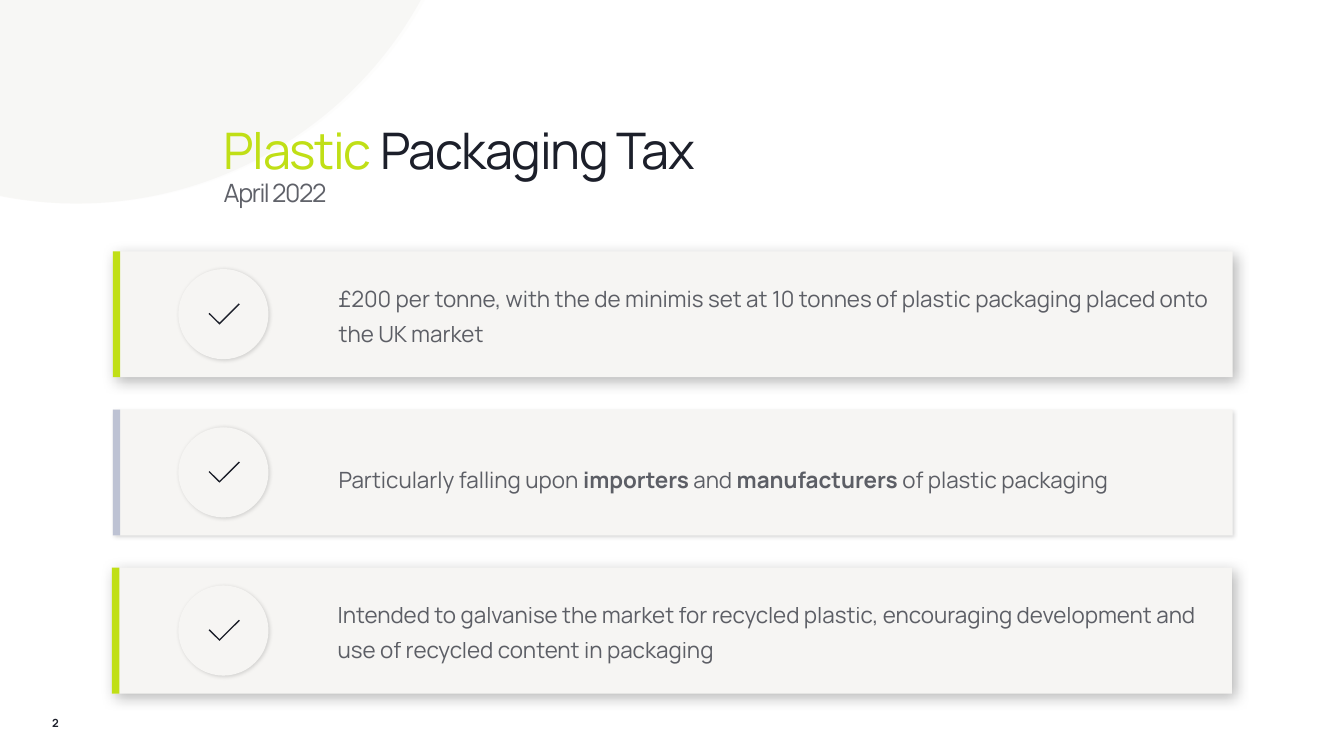
"""Build the Plastic Packaging Tax slide with three ticked cards."""
import pptx
import pptx.util
import pptx.dml.color
import pptx.enum.shapes
import pptx.enum.text
import pptx.oxml
import pptx.oxml.ns
import lxml.etree

Pt = pptx.util.Pt
RECT = pptx.enum.shapes.MSO_SHAPE.RECTANGLE
OVAL = pptx.enum.shapes.MSO_SHAPE.OVAL
ALIGN = pptx.enum.text.PP_ALIGN
MIDDLE = pptx.enum.text.MSO_ANCHOR.MIDDLE
qn = pptx.oxml.ns.qn
DARK, LIME, PALE, GREY = "1C1F2A", "C0DF16", "F6F5F3", "BDC2D3"
SOFT, DEEP = (15, 3, 1), (27, 10, 3)


def ink(item, hue, alpha=100, cast=None):
    """Colour a shape or a font; cast is shadow opacity, blur and distance."""
    item.fill.solid()
    item.fill.fore_color.rgb = pptx.dml.color.RGBColor.from_string(hue)
    if alpha < 100:
        tint = item._element.find(".//" + qn("a:srgbClr"))
        lxml.etree.SubElement(tint, qn("a:alpha"), val=str(alpha * 1000))
    if hasattr(item, "line"):
        item.line.fill.background()
        item.shadow.inherit = False
    if cast:
        shade, blur, dist = cast
        glow = lxml.etree.SubElement(
            item.element.spPr.find(qn("a:effectLst")), qn("a:outerShdw"),
            blurRad=str(Pt(blur)), dist=str(Pt(dist)), dir=str(45 * 60000),
            algn="tl", rotWithShape="0")
        tint = lxml.etree.SubElement(glow, qn("a:srgbClr"), val="000000")
        lxml.etree.SubElement(tint, qn("a:alpha"), val=str(shade * 1000))


def write(para, text, size=16, hue=DARK, alpha=100, bold=False, track=0):
    """Add a run of text to a paragraph."""
    run = para.add_run()
    run.text = text
    run.font.name = "Manrope"
    run.font.size = Pt(size)
    run.font.bold = bold
    ink(run.font, hue, alpha)
    if track:
        run.font._element.set("spc", str(track * 100))


deck = pptx.Presentation()
deck.slide_width, deck.slide_height = Pt(960), Pt(540)
board = deck.slides.add_slide(deck.slide_layouts[6]).shapes

for left, alpha in ((-226.8, 18), (-223.9, 5)):
    disc = board.add_shape(OVAL, Pt(left), Pt(-416.9), Pt(562.3), Pt(562.3))
    ink(disc, "E1DED7", alpha)

number = board.add_textbox(Pt(0), Pt(501.8), Pt(79.2), Pt(28.8)).text_frame
number.word_wrap = True
number.vertical_anchor = MIDDLE
number.paragraphs[0].alignment = ALIGN.CENTER
write(number.paragraphs[0], "2", size=8, bold=True)

title = board.add_textbox(Pt(159.8), Pt(74.9), Pt(720.7), Pt(98.6)).text_frame
title.word_wrap = True
title.margin_left = title.margin_right = title.margin_bottom = 0
title.margin_top = Pt(15.1)
head = title.paragraphs[0]
head.line_spacing = 0.9
write(head, "Plastic", size=36, hue=LIME, track=-1)
write(head, " Packaging Tax", size=36, track=-1)
head.add_line_break()
write(head, "April 2022", size=18, alpha=70, track=-1)

cards = [
    (80.6, LIME, DEEP, 0, [
        "£200 per tonne, with the de minimis set at 10 tonnes of plastic "
        "packaging placed onto the UK market"]),
    (80.6, GREY, SOFT, 7.5, [
        "Particularly falling upon ", "importers", " and ", "manufacturers",
        " of plastic packaging"]),
    (79.9, LIME, DEEP, 0, [
        "Intended to galvanise the market for recycled plastic, encouraging "
        "development and use of recycled content in packaging"]),
]
tick = [(22.3, 0.7), (21.6, 0), (7.8, 13.8), (0.7, 6.8), (0, 7.5), (7.8, 15.1)]

for row, (left, hue, cast, drop, parts) in enumerate(cards):
    top = 179.5 + 113 * row
    card = board.add_shape(RECT, Pt(left), Pt(top), Pt(800), Pt(90))
    ink(card, PALE, cast=cast)
    frame = card.text_frame
    frame.word_wrap = True
    frame.vertical_anchor = MIDDLE
    frame.margin_left, frame.margin_right = Pt(161.3), Pt(7.2)
    frame.margin_top, frame.margin_bottom = Pt(drop), Pt(3.6)
    para = frame.paragraphs[0]
    para.alignment = ALIGN.LEFT
    para.line_spacing = 1.3
    for place, part in enumerate(parts):
        write(para, part, alpha=70, bold=place % 2 == 1)

    bar = board.add_shape(RECT, Pt(left), Pt(top), Pt(5.3), Pt(90))
    ink(bar, hue)
    ring = board.add_shape(OVAL, Pt(127.4), Pt(top + 12.7), Pt(64.4), Pt(64.4))
    ink(ring, PALE, cast=SOFT)
    spots = [(Pt(149 + x), Pt(top + 37.2 + y)) for x, y in tick]
    path = board.build_freeform(*spots[0])
    path.add_line_segments(spots[1:], close=True)
    ink(path.convert_to_shape(), DARK)

deck.save("out.pptx")
